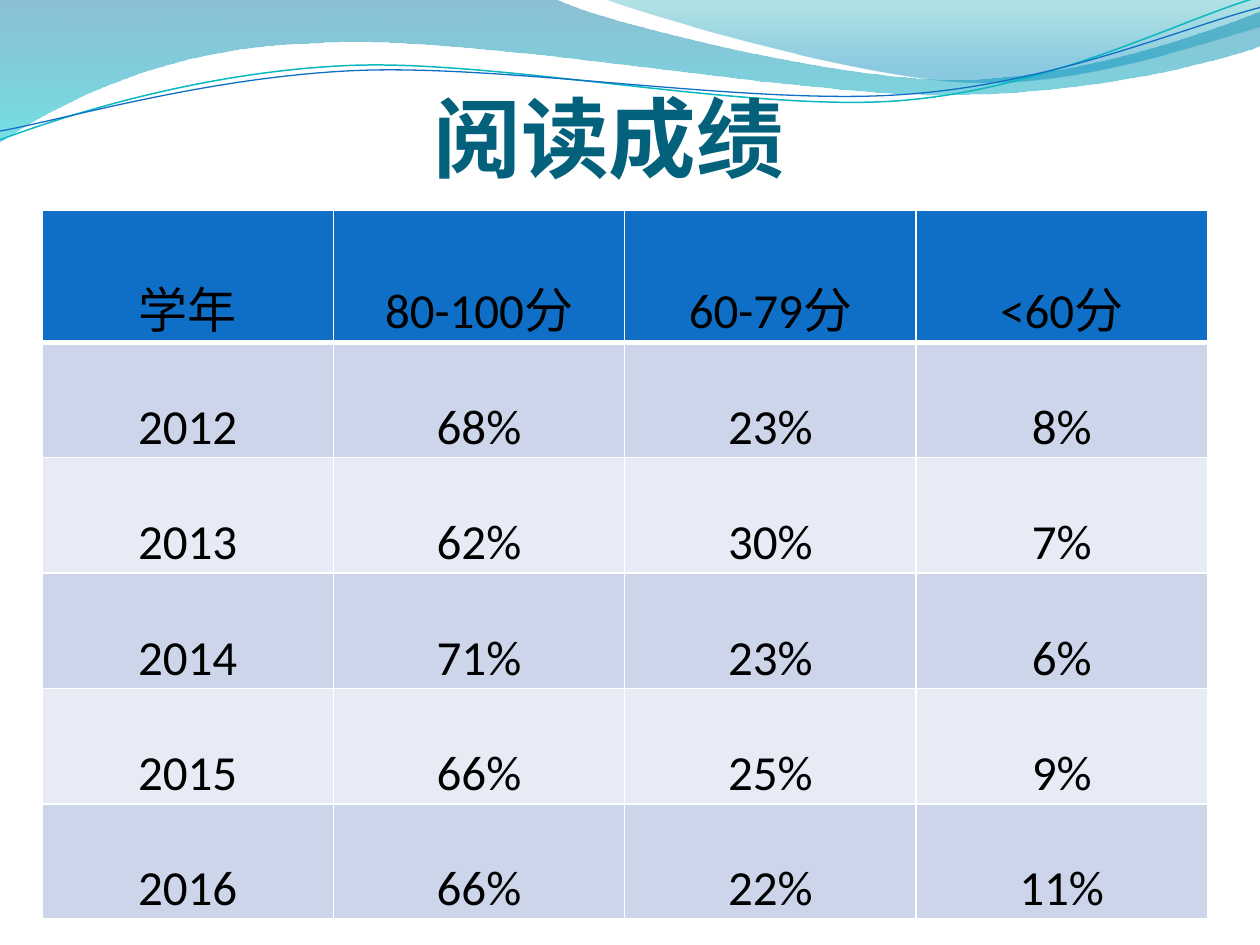
from math import cos, radians, sin

from lxml.etree import SubElement
from pptx import Presentation
from pptx.dml.color import RGBColor
from pptx.enum.text import MSO_ANCHOR, PP_ALIGN
from pptx.oxml.ns import qn
from pptx.util import Inches, Pt

WIDE, HIGH = 10, 7.5
TILT = 2.7
HEAD, TALL = 1.05, 5.63
WHITE = RGBColor(0xFF, 0xFF, 0xFF)
BLACK = RGBColor(0x00, 0x00, 0x00)
TITLE = RGBColor(0x04, 0x61, 0x7B)
BLUE = RGBColor(0x0F, 0x6F, 0xC6)
TEAL = RGBColor(0x0A, 0xB8, 0xBF)
BANDS = RGBColor(0xE7, 0xEB, 0xF5), RGBColor(0xCC, 0xD5, 0xEA)
DEEP = (0, RGBColor(0x00, 0x74, 0xA1), 45), (1, RGBColor(0x00, 0xC6, 0xCF), 55)
PALE = (0, RGBColor(0x00, 0xA1, 0xA9), 30), (0.8, RGBColor(0x00, 0x8B, 0xBF), 45)
LATIN, SERIF = "Calibri", "TeX Gyre Pagella"

SWEEP = [
    (0, 0), (4.4, -0.01),
    (4.76, 0.17, 6.64, 0.63, 7.58, 0.63), (8.53, 0.63, 9.58, 0.26, 10, 0.09),
    (10.01, 0.36),
    (9.83, 0.44, 8.7, 0.76, 7.46, 0.75), (6.22, 0.75, 3.82, 0.28, 2.57, 0.34),
    (1.29, 0.36, 0.46, 0.83, -0.01, 1.13), (0, 0),
]
CREST = [
    (4.79, -0.01),
    (5.09, 0.11, 6.82, 0.62, 7.69, 0.65), (8.56, 0.69, 9.61, 0.32, 10, 0.21),
    (10, 0), (4.79, -0.01),
]
UPPER = [
    (0, 1.11),
    (0.48, 0.93, 1.58, 0.57, 2.77, 0.52), (3.95, 0.47, 5.93, 0.89, 7.13, 0.8),
    (8.33, 0.71, 9.38, 0.15, 9.98, -0.02),
]
LOWER = [
    (0, 1.04),
    (0.47, 0.96, 1.64, 0.61, 2.83, 0.56), (4.03, 0.51, 5.97, 0.84, 7.17, 0.75),
    (8.36, 0.67, 9.41, 0.21, 10, 0.06),
]
HEADS = [
    [("学年", LATIN)],
    [("80-100分", LATIN)],
    [("60-79", LATIN), ("分", SERIF)],
    [("<60", LATIN), ("分", SERIF)],
]
SCORES = [
    ("2012", "68%", "23%", "8%"),
    ("2013", "62%", "30%", "7%"),
    ("2014", "71%", "23%", "6%"),
    ("2015", "66%", "25%", "9%"),
    ("2016", "66%", "22%", "11%"),
]


def write(para, text, size=28, font=LATIN, color=BLACK, bold=False):
    """Add one centred run of text to a paragraph."""
    para.alignment = PP_ALIGN.CENTER
    run = para.add_run()
    run.text = text
    run.font.size, run.font.name, run.font.bold = Pt(size), font, bold
    run.font.color.rgb = color


def pairs(move):
    """Split a flat move into points in EMU."""
    return [(Inches(x), Inches(y)) for x, y in zip(move[::2], move[1::2])]


def outline(slide, moves, close):
    """Draw corners and cubic curves as a freeform without shadow."""
    first, *rest = [pairs(move)[-1] for move in moves]
    pen = slide.shapes.build_freeform(*first)
    pen.add_line_segments(rest, close=close)
    shape = pen.convert_to_shape()
    shape.shadow.inherit = False
    for line, move in zip(list(shape.element.iter(qn("a:lnTo"))), moves[1:]):
        if len(move) == 6:
            line.tag = qn("a:cubicBezTo")
            line.clear()
            for x, y in pairs(move):
                SubElement(line, qn("a:pt"), x=str(x - shape.left), y=str(y - shape.top))
    return shape


def wave(slide, moves, stops):
    """Draw a wave filled from top to bottom with a see-through gradient."""
    shape = outline(slide, moves, True)
    shape.line.fill.background()
    shape.fill.gradient()
    shape.fill.gradient_angle = 270
    for stop, (place, color, _) in zip(shape.fill.gradient_stops, stops):
        stop.position, stop.color.rgb = place, color
    for tint, (_, _, alpha) in zip(shape.element.spPr.iter(qn("a:srgbClr")), stops):
        SubElement(tint, qn("a:alpha"), val=str(alpha * 1000))


def turn(move, pivot):
    """Turn the points of a move clockwise by the tilt around a pivot."""
    c, s = cos(radians(TILT)), sin(radians(TILT))
    px, py = pivot
    flat = []
    for x, y in zip(move[::2], move[1::2]):
        flat += [px + c * (x - px) - s * (y - py), py + s * (x - px) + c * (y - py)]
    return flat


def strand(slide, moves, pivot, color, width):
    """Draw a thin open curve as a tilted shape."""
    shape = outline(slide, [turn(move, pivot) for move in moves], False)
    shape.rotation = 360 - TILT
    shape.fill.background()
    shape.line.color.rgb, shape.line.width = color, Pt(width)


def heading(slide, text):
    """Place the slide title."""
    box = slide.shapes.add_textbox(Inches(WIDE / 30), Inches(HIGH / 30), Inches(WIDE * 0.9), Inches(HIGH / 6))
    frame = box.text_frame
    frame.word_wrap, frame.vertical_anchor = True, MSO_ANCHOR.BOTTOM
    frame.margin_left = frame.margin_right = frame.margin_bottom = 0
    write(frame.paragraphs[0], text, size=50, color=TITLE, bold=True)


def border(cell, **widths):
    """Give a cell white borders, with a width in points for each side."""
    props = cell._tc.get_or_add_tcPr()
    for side, width in widths.items():
        line = SubElement(props, qn("a:ln" + side), w=str(Pt(width)))
        SubElement(SubElement(line, qn("a:solidFill")), qn("a:srgbClr"), val=str(WHITE))


def grid(slide, rows):
    """Build the score table from rows of text parts."""
    count = len(rows[0])
    frame = slide.shapes.add_table(
        len(rows), count, Inches(WIDE / 30), Inches(HIGH * 2 / 9), Inches(9.25), Inches(TALL))
    table = frame.table
    for col in table.columns:
        col.width = Inches(9.25 / count)
    for r, row in enumerate(rows):
        table.rows[r].height = Inches((TALL - HEAD) / (len(rows) - 1) if r else HEAD)
        for c, parts in enumerate(row):
            cell = table.cell(r, c)
            border(cell, L=1, R=1, T=3 if r == 1 else 1, B=1 if r else 3)
            cell.fill.solid()
            cell.fill.fore_color.rgb = BANDS[r % 2] if r else BLUE
            cell.vertical_anchor = MSO_ANCHOR.BOTTOM
            cell.margin_left = cell.margin_right = cell.margin_top = Inches(0.01)
            cell.margin_bottom = 0
            for text, font in parts:
                write(cell.text_frame.paragraphs[0], text, font=font)


def main():
    """Build the slide and save it."""
    deck = Presentation()
    deck.slide_width, deck.slide_height = Inches(WIDE), Inches(HIGH)
    slide = deck.slides.add_slide(deck.slide_layouts[6])
    wave(slide, SWEEP, DEEP)
    wave(slide, CREST, PALE)
    strand(slide, UPPER, (4.99, 0.57), TEAL, 0.85)
    strand(slide, LOWER, (5, 0.59), BLUE, 0.75)
    heading(slide, "阅读成绩")
    grid(slide, [HEADS] + [[[(text, LATIN)] for text in row] for row in SCORES])
    deck.save("out.pptx")


if __name__ == "__main__":
    main()
